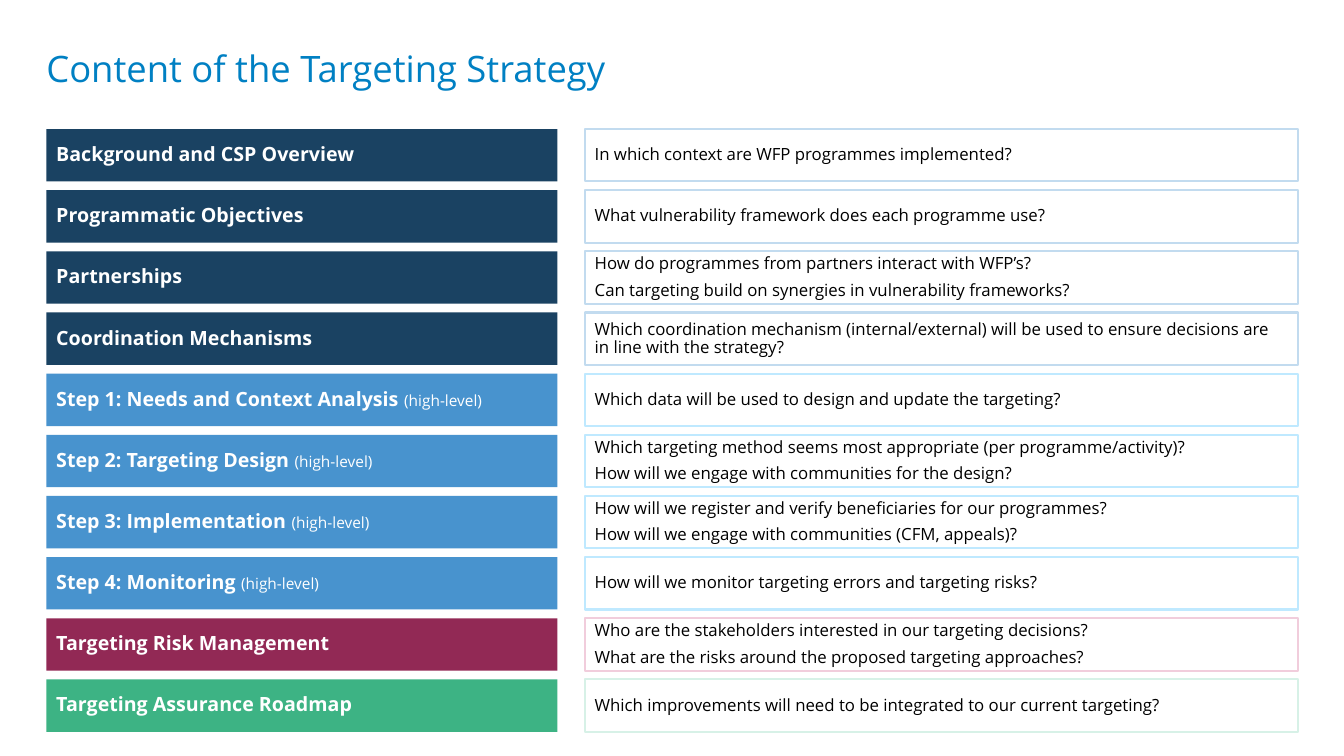
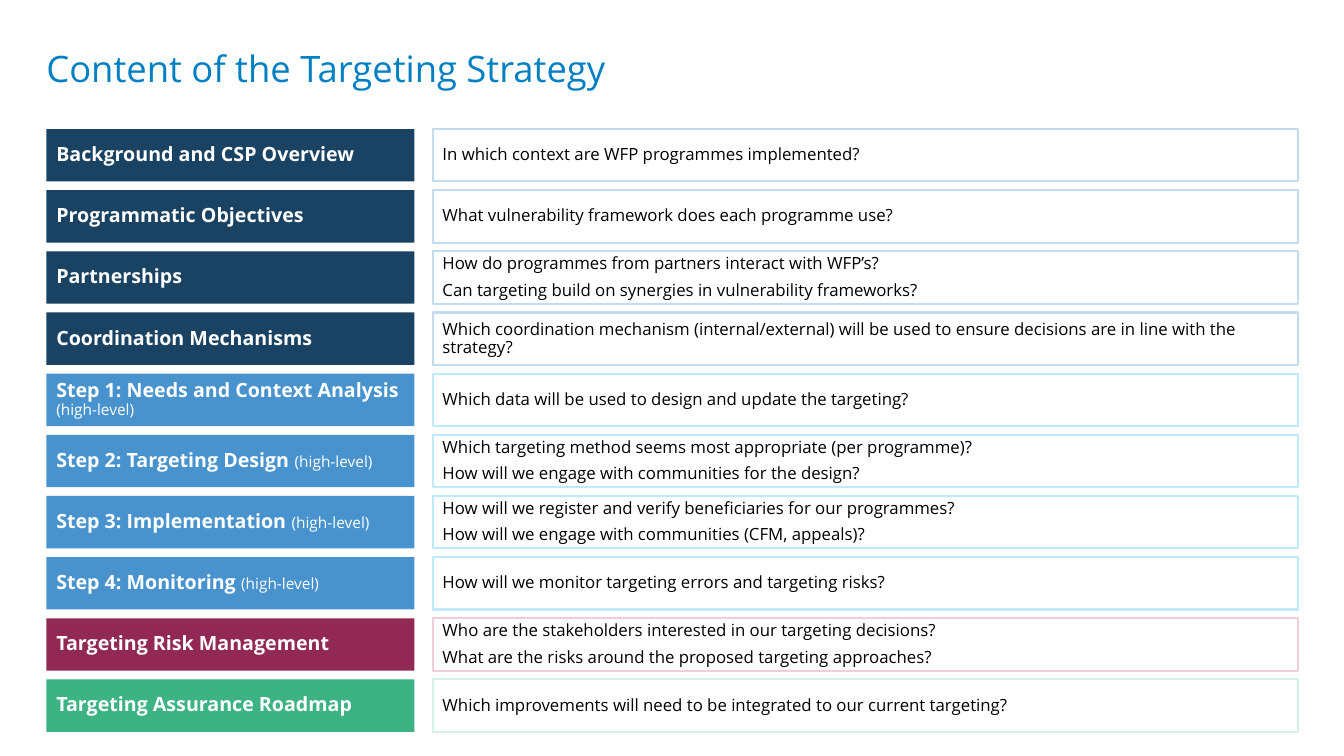
"""Build two slides that pair each targeting strategy section with its guiding questions."""

from dataclasses import dataclass

import pptx
import pptx.dml.color
import pptx.enum.shapes
import pptx.enum.text
import pptx.util

Inches = pptx.util.Inches
Pt = pptx.util.Pt
RGBColor = pptx.dml.color.RGBColor


@dataclass(frozen=True)
class Tone:
    fill: str
    outline: str


@dataclass(frozen=True)
class Theme:
    font: str = "Open Sans"
    title_color: str = "0080C3"
    label_color: str = "FFFFFF"
    question_color: str = "000000"
    title_size: int = 26
    label_size: int = 14
    note_size: int = 11
    question_size: int = 12
    outline_width: float = 1.5
    line_spacing: float = 0.9
    space_after: int = 6
    context: Tone = Tone("1A4262", "C2DBEF")
    step: Tone = Tone("4893CE", "BFE9FF")
    risk: Tone = Tone("922955", "F1CDDC")
    roadmap: Tone = Tone("3DB384", "D7F1E7")


@dataclass(frozen=True)
class Section:
    label: str
    tone: Tone
    questions: tuple[str, ...]
    note: str = ""


@dataclass(frozen=True)
class Layout:
    label_width: float
    question_left: float
    method_scope: str


THEME = Theme()
TITLE = "Content of the Targeting Strategy"
LEFT, RIGHT = 0.46, 12.87
FIRST_TOP, LAST_TOP, ROW_HEIGHT = 1.28, 6.74, 0.52
NOTE = "(high-level)"
LAYOUTS = (
    Layout(5.07, 5.8, "per programme/activity"),
    Layout(3.65, 4.29, "per programme"),
)


def list_sections(method_scope: str) -> list[Section]:
    """Return the strategy sections from top to bottom."""
    return [
        Section("Background and CSP Overview", THEME.context,
                ("In which context are WFP programmes implemented?",)),
        Section("Programmatic Objectives", THEME.context,
                ("What vulnerability framework does each programme use?",)),
        Section("Partnerships", THEME.context,
                ("How do programmes from partners interact with WFP’s?",
                 "Can targeting build on synergies in vulnerability frameworks?")),
        Section("Coordination Mechanisms", THEME.context,
                ("Which coordination mechanism (internal/external) will be used to "
                 "ensure decisions are in line with the strategy?",)),
        Section("Step 1: Needs and Context Analysis", THEME.step,
                ("Which data will be used to design and update the targeting?",), NOTE),
        Section("Step 2: Targeting Design", THEME.step,
                (f"Which targeting method seems most appropriate ({method_scope})?",
                 "How will we engage with communities for the design?"), NOTE),
        Section("Step 3: Implementation", THEME.step,
                ("How will we register and verify beneficiaries for our programmes?",
                 "How will we engage with communities (CFM, appeals)?"), NOTE),
        Section("Step 4: Monitoring", THEME.step,
                ("How will we monitor targeting errors and targeting risks?",), NOTE),
        Section("Targeting Risk Management", THEME.risk,
                ("Who are the stakeholders interested in our targeting decisions?",
                 "What are the risks around the proposed targeting approaches?")),
        Section("Targeting Assurance Roadmap", THEME.roadmap,
                ("Which improvements will need to be integrated to our current targeting?",)),
    ]


def style_paragraph(para, size: int, color: str) -> None:
    """Set the shared font and spacing of a paragraph."""
    para.alignment = pptx.enum.text.PP_ALIGN.LEFT
    para.line_spacing = THEME.line_spacing
    para.font.name = THEME.font
    para.font.size = Pt(size)
    para.font.color.rgb = RGBColor.from_string(color)


def add_title(page) -> None:
    """Add the slide title."""
    box = page.shapes.add_textbox(Inches(LEFT), Inches(0.51), Inches(12.43), Inches(0.39))
    frame = box.text_frame
    frame.word_wrap = True
    frame.margin_left = frame.margin_right = frame.margin_top = frame.margin_bottom = 0
    para = frame.paragraphs[0]
    para.text = TITLE
    style_paragraph(para, THEME.title_size, THEME.title_color)


def add_row_box(page, left: float, top: float, width: float):
    """Add a plain rectangle of row height with centred anchoring."""
    box = page.shapes.add_shape(
        pptx.enum.shapes.MSO_SHAPE.RECTANGLE,
        Inches(left), Inches(top), Inches(width), Inches(ROW_HEIGHT))
    box.shadow.inherit = False
    box.text_frame.word_wrap = True
    box.text_frame.vertical_anchor = pptx.enum.text.MSO_ANCHOR.MIDDLE
    return box


def add_label(page, section: Section, top: float, width: float) -> None:
    """Add the filled box that names a section."""
    box = add_row_box(page, LEFT, top, width)
    box.fill.solid()
    box.fill.fore_color.rgb = RGBColor.from_string(section.tone.fill)
    box.line.fill.background()
    para = box.text_frame.paragraphs[0]
    style_paragraph(para, THEME.label_size, THEME.label_color)
    para.space_after = Pt(THEME.space_after)
    para.font.bold = True
    span = para.add_run()
    span.text = section.label
    if section.note:
        span.text += " "
        note = para.add_run()
        note.text = section.note
        note.font.size = Pt(THEME.note_size)
        note.font.bold = False


def add_questions(page, section: Section, top: float, left: float) -> None:
    """Add the outlined box that holds the questions of a section."""
    box = add_row_box(page, left, top, RIGHT - left)
    box.fill.background()
    box.line.color.rgb = RGBColor.from_string(section.tone.outline)
    box.line.width = Pt(THEME.outline_width)
    frame = box.text_frame
    for index, question in enumerate(section.questions):
        para = frame.add_paragraph() if index else frame.paragraphs[0]
        para.text = question
        style_paragraph(para, THEME.question_size, THEME.question_color)
        para.space_after = Pt(THEME.space_after)


def add_strategy_page(deck, layout: Layout) -> None:
    """Add one slide with a row for each section."""
    page = deck.slides.add_slide(deck.slide_layouts[6])
    add_title(page)
    sections = list_sections(layout.method_scope)
    pitch = (LAST_TOP - FIRST_TOP) / (len(sections) - 1)
    for index, section in enumerate(sections):
        top = FIRST_TOP + index * pitch
        add_label(page, section, top, layout.label_width)
        add_questions(page, section, top, layout.question_left)


def main() -> None:
    """Build and save the deck."""
    deck = pptx.Presentation()
    deck.slide_width = Inches(13.33)
    deck.slide_height = Inches(7.5)
    for layout in LAYOUTS:
        add_strategy_page(deck, layout)
    deck.save("out.pptx")


if __name__ == "__main__":
    main()
